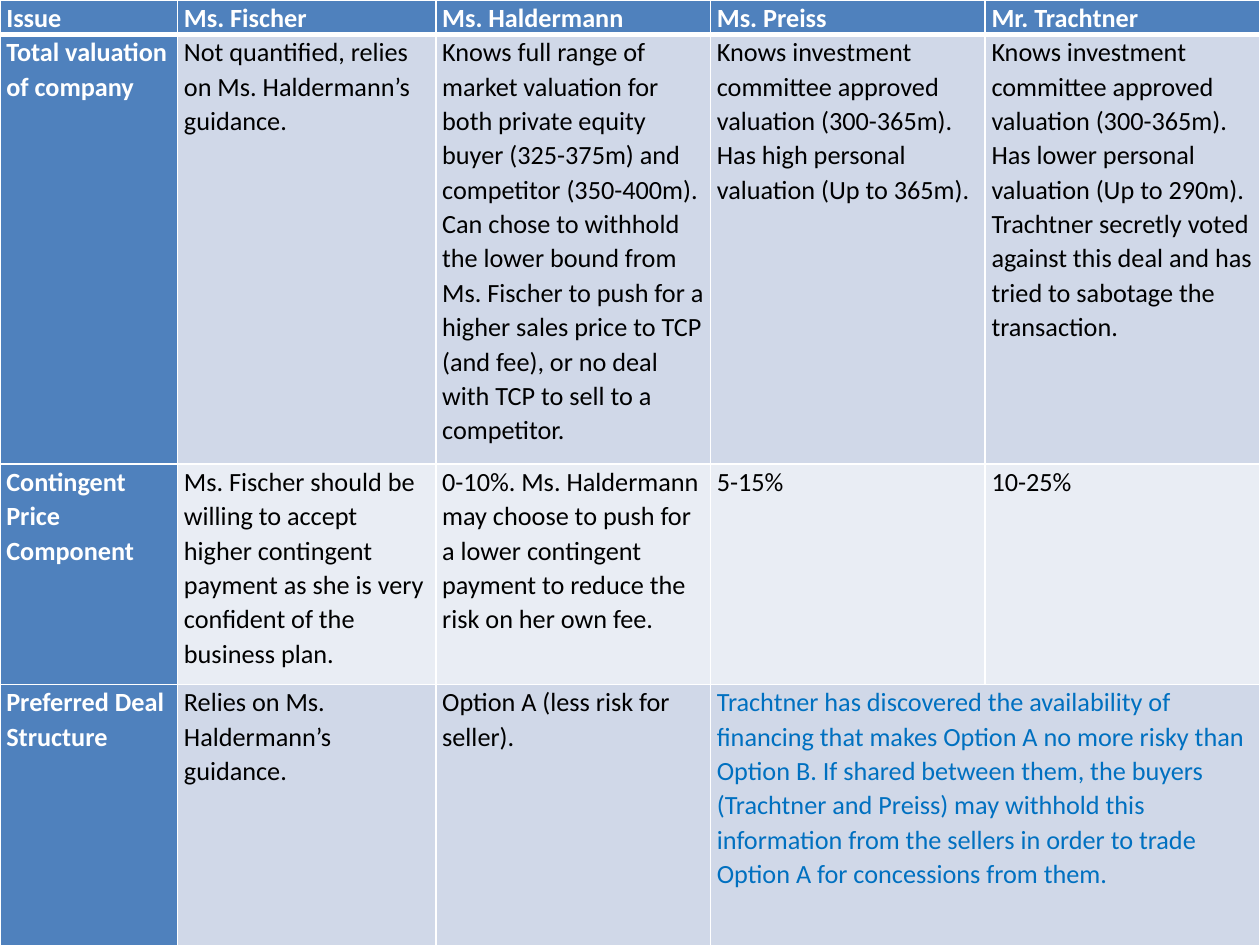
from lxml.etree import SubElement
from pptx import Presentation
from pptx.dml.color import RGBColor
from pptx.enum.text import PP_ALIGN as Align
from pptx.oxml.ns import qn
from pptx.util import Inches, Pt

WHITE, BLACK, BLUE, HIGHLIGHT = "FFFFFF", "000000", "4F81BD", "0070C0"
BANDS = ["D0D8E8", "E9EDF4"]
COLUMN_WIDTHS = [1.41, 2.05, 2.18, 2.18, 2.18]
ROW_HEIGHTS = [0.26, 3.41, 1.75, 2.2]

# The last cell of the last row spans both buyers
ROWS = [
    ["Issue ", "Ms. Fischer", "Ms. Haldermann", "Ms. Preiss", "Mr. Trachtner"],
    ["Total valuation of company",
     "Not quantified, relies on Ms. Haldermann’s guidance.",
     "Knows full range of market valuation for both private equity buyer "
     "(325-375m) and competitor (350-400m). Can chose to withhold the lower "
     "bound from Ms. Fischer to push for a higher sales price to TCP (and fee), "
     "or no deal with TCP to sell to a competitor.",
     "Knows investment committee approved valuation (300-365m). Has high "
     "personal valuation (Up to 365m).",
     "Knows investment committee approved valuation (300-365m). Has lower "
     "personal valuation (Up to 290m). Trachtner secretly voted against this "
     "deal and has tried to sabotage the transaction."],
    ["Contingent Price Component",
     "Ms. Fischer should be willing to accept higher contingent payment as she "
     "is very confident of the business plan.",
     "0-10%. Ms. Haldermann may choose to push for a lower contingent payment "
     "to reduce the risk on her own fee.",
     "5-15%",
     "10-25%"],
    ["Preferred Deal Structure",
     "Relies on Ms. Haldermann’s guidance.",
     "Option A (less risk for seller).",
     "Trachtner has discovered the availability of financing that makes Option A "
     "no more risky than Option B. If shared between them, the buyers "
     "(Trachtner and Preiss) may withhold this information from the sellers in "
     "order to trade Option A for concessions from them."],
]


def color(hex_string):
    return RGBColor.from_string(hex_string)


def set_borders(cell, top=1, bottom=1):
    """Draw white lines round a cell; widths are in points."""
    properties = cell._tc.get_or_add_tcPr()
    for side, width in (("L", 1), ("R", 1), ("T", top), ("B", bottom)):
        line = SubElement(properties, qn(f"a:ln{side}"), w=str(Pt(width)))
        fill = SubElement(line, qn("a:solidFill"))
        SubElement(fill, qn("a:srgbClr"), val=WHITE)


def style_cell(cell, fill):
    cell.margin_left = cell.margin_right = Inches(0.05)
    cell.margin_top = cell.margin_bottom = 0
    cell.fill.solid()
    cell.fill.fore_color.rgb = color(fill)


def write_text(cell, text, text_color, bold, align):
    cell.text = text
    paragraph = cell.text_frame.paragraphs[0]
    paragraph.alignment = align
    paragraph.line_spacing = 1.07
    paragraph.space_after = Pt(8)
    font = paragraph.font
    font.name, font.size, font.bold = "Calibri", Pt(15), bold
    font.color.rgb = color(text_color)


def add_issue_table(slide):
    frame = slide.shapes.add_table(
        len(ROW_HEIGHTS), len(COLUMN_WIDTHS), 0, 0,
        Inches(sum(COLUMN_WIDTHS)), Inches(sum(ROW_HEIGHTS)))
    table = frame.table
    for column, width in zip(table.columns, COLUMN_WIDTHS):
        column.width = Inches(width)
    for row, height in zip(table.rows, ROW_HEIGHTS):
        row.height = Inches(height)

    # Borders and fills: blue header row and first column, banded body
    for r in range(len(ROW_HEIGHTS)):
        for c in range(len(COLUMN_WIDTHS)):
            cell = table.cell(r, c)
            set_borders(cell, top=3 if r == 1 else 1, bottom=3 if r == 0 else 1)
            style_cell(cell, BLUE if r == 0 or c == 0 else BANDS[(r - 1) % 2])

    # Text
    for r, texts in enumerate(ROWS):
        for c, text in enumerate(texts):
            heading = r == 0 or c == 0
            write_text(table.cell(r, c), text, WHITE if heading else BLACK,
                       heading, Align.JUSTIFY if r == 0 else Align.LEFT)

    # Shared note for both buyers
    note = table.cell(3, 3)
    note.merge(table.cell(3, 4))
    note.text_frame.paragraphs[0].font.color.rgb = color(HIGHLIGHT)


def main():
    presentation = Presentation()
    presentation.slide_width = Inches(10)
    presentation.slide_height = Inches(7.5)
    slide = presentation.slides.add_slide(presentation.slide_layouts[6])
    add_issue_table(slide)
    presentation.save("out.pptx")


if __name__ == "__main__":
    main()
